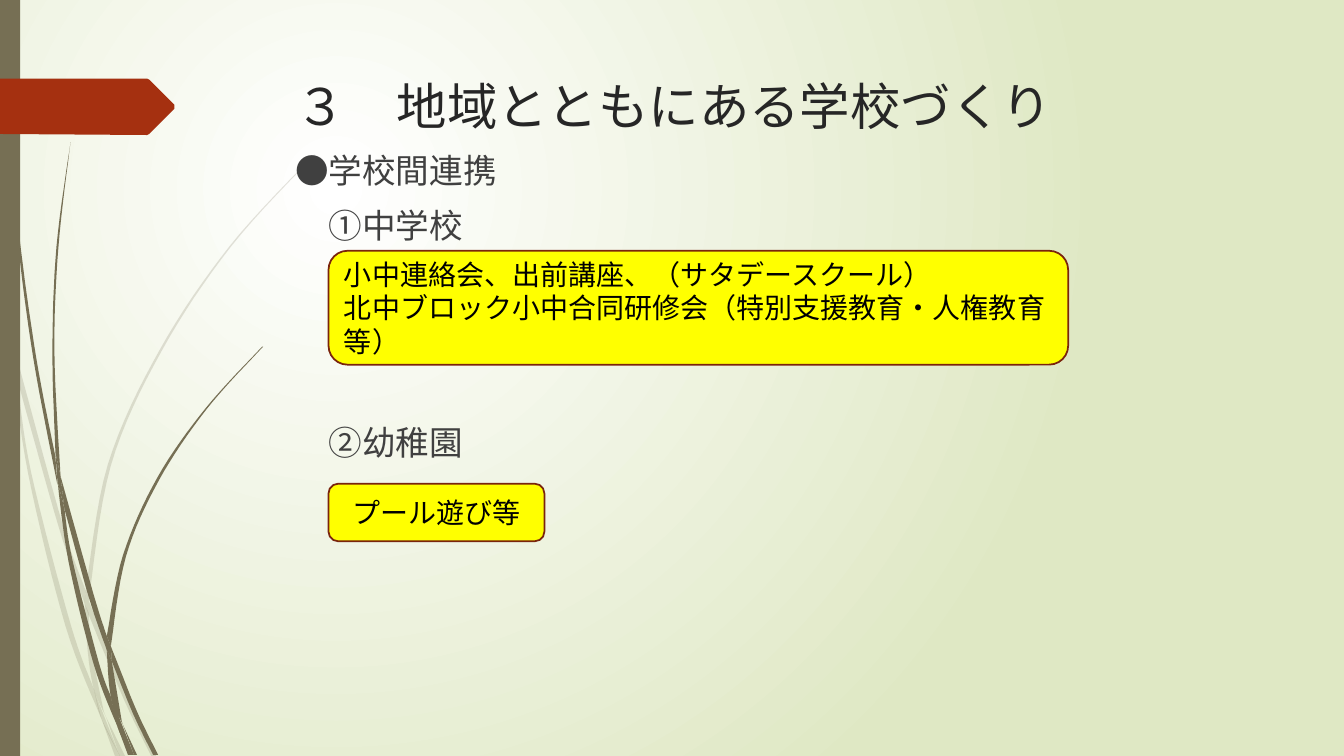
"""Build the slide on school partnerships with the community."""
import pptx
import pptx.dml.color
import pptx.enum.dml
import pptx.enum.shapes
import pptx.enum.text
import pptx.oxml.ns
import pptx.util
from lxml import etree

Cm, Pt = pptx.util.Cm, pptx.util.Pt
qn = pptx.oxml.ns.qn
SHAPES = pptx.enum.shapes.MSO_SHAPE
ALIGN = pptx.enum.text.PP_ALIGN
ANCHOR = pptx.enum.text.MSO_ANCHOR

THEME = {
    "glow": "FFFFFF", "meadow": "DFE8C4", "stem": "766F54", "flag": "A53010",
    "note": "FFFF00", "note_line": "7A240C", "title": "262626", "body": "404040",
    "note_text": "000000", "title_font": "TeX Gyre Adventor",
    "body_font": "Noto Sans CJK JP", "title_size": 36, "body_size": 24,
    "note_size": 20, "leading": 1.2, "gap": 10,
}

TITLE = ["３　地域とともにある学校づくり"]
BODY = ["●学校間連携", "　①中学校", "　②幼稚園"]
LINES_LEFT_OPEN = [0, 0, 3]
NOTES = [
    (["小中連絡会、出前講座、（サタデースクール）",
      "北中ブロック小中合同研修会（特別支援教育・人権教育等）"],
     (8.28, 6.32, 18.64, 2.87), ALIGN.LEFT),
    (["プール遊び等"], (8.28, 12.19, 5.44, 1.45), ALIGN.CENTER),
]

PALE_BLADES = [
    [[(0, 2.82), (.09, 3.22), (.11, 3.5)], [(.1, 3.44), (0, 2.99)]],
    [[(.14, 3.45), (.62, 5.2), (.85, 5.86)], [(.84, 5.99), (.58, 5.22), (.17, 3.76)]],
    [[(.88, 5.96), (1.27, 6.92), (1.55, 7.5)], [(1.5, 7.5), (1.23, 6.94), (.88, 6.1)]],
    [[(1.05, 7.11), (1.24, 7.5)], [(1.19, 7.5), (1.05, 7.11)]],
    [[(.11, 3.5), (.28, 4.7), (.65, 6.21), (1.01, 7.14)],
     [(.93, 6.83), (.7, 6.19), (.31, 4.69), (.17, 3.76)]],
    [[(.84, 5.99), (.87, 6.46), (.93, 6.83), (1.05, 7.11)],
     [(1.03, 7.06), (.91, 6.46), (.88, 6.08)]],
    [[(.85, 5.86), (1.07, 4.61), (1.58, 3.48), (2.28, 2.44), (3.12, 1.53)],
     [(3.12, 1.54), (2.29, 2.45), (1.6, 3.49), (1.1, 4.62), (.88, 5.96)]],
    [[(1.01, 7.14), (1.14, 7.5)], [(1.19, 7.5), (1.01, 7.14)]],
    [[(.84, 5.99), (.85, 5.86)], [(.88, 5.96), (.88, 6.1)]],
    [[(.93, 6.83), (1.01, 7.14), (1.19, 7.5)], [(1.19, 7.5), (.96, 6.92)]],
]
DARK_BLADES = [
    [[(.03, 0), (.07, 1.1), (.17, 2.33), (.33, 3.55), (.57, 4.81)],
     [(.55, 4.53), (.36, 3.55), (.19, 2.32), (.08, 1.09), (.04, 0)]],
    [[(.6, 4.72), (.93, 5.9), (1.06, 6.31)], [(1.06, 6.45), (.88, 5.92), (.64, 5.05)]],
    [[(1.1, 6.41), (1.36, 7.06), (1.57, 7.49)], [(1.52, 7.49), (1.32, 7.08), (1.11, 6.56)]],
    [[(.57, 4.77), (.68, 5.57), (.93, 6.59), (1.17, 7.22)],
     [(1.1, 6.91), (.98, 6.57), (.72, 5.56), (.64, 5.05)]],
    [[(.6, 4.72), (.54, 3.49), (.58, 2.45), (.7, 1.41)],
     [(.7, 1.41), (.56, 2.45), (.52, 3.49), (.55, 4.49)]],
    [[(1.22, 7.19), (1.36, 7.49)], [(1.33, 7.49), (1.22, 7.19)]],
    [[(.55, 4.49), (.6, 4.72)], [(.64, 5.05), (.57, 4.77)]],
    [[(1.06, 6.31), (1.22, 5.51), (1.56, 4.74), (2.04, 4.05), (2.6, 3.44)],
     [(2.61, 3.44), (2.05, 4.06), (1.58, 4.76), (1.25, 5.52), (1.1, 6.41)]],
    [[(1.17, 7.22), (1.31, 7.49)], [(1.27, 7.49), (1.17, 7.22)]],
    [[(1.06, 6.45), (1.1, 6.91), (1.22, 7.19)], [(1.21, 7.16), (1.11, 6.56)]],
    [[(1.06, 6.31), (1.1, 6.41)], [(1.11, 6.56), (1.06, 6.45)]],
    [[(1.1, 6.91), (1.17, 7.22), (1.3, 7.49)], [(1.33, 7.49), (1.1, 6.91)]],
]
FLAG = [[(0, .78), (1.46, .78)], [(1.48, .79), (1.73, 1.04)],
        [(1.73, 1.08), (1.48, 1.33)], [(1.46, 1.34), (0, 1.33)]]


def colour(name):
    return pptx.dml.color.RGBColor.from_string(THEME[name])


def smooth(edge, steps=8):
    """Return points along a Catmull-Rom curve through the edge."""
    if len(edge) == 2:
        return edge
    padded = [edge[0], *edge, edge[-1]]
    points = [edge[0]]
    for before, start, end, after in zip(padded, padded[1:], padded[2:], padded[3:]):
        for step in range(1, steps + 1):
            t = step / steps
            points.append(tuple(
                (2 * b + (c - a) * t + (2 * a - 5 * b + 4 * c - d) * t ** 2
                 + (3 * b - a - 3 * c + d) * t ** 3) / 2
                for a, b, c, d in zip(before, start, end, after)))
    return points


def paint(shape, fill, line=None):
    shape.shadow.inherit = False
    shape.fill.solid()
    shape.fill.fore_color.rgb = colour(fill)
    if line:
        shape.line.color.rgb = colour(line)
        shape.line.width = Pt(1.25)
    else:
        shape.line.fill.background()


def add_outline(page, edges, fill, opacity=100):
    points = [(x * 1000, y * 1000) for edge in edges for x, y in smooth(edge)]
    builder = page.shapes.build_freeform(*points[0], scale=Cm(2.54) / 1000)
    builder.add_line_segments(points[1:], close=True)
    shape = builder.convert_to_shape()
    paint(shape, fill)
    if opacity < 100:
        tint = shape.element.spPr.find(qn("a:solidFill")).find(qn("a:srgbClr"))
        etree.SubElement(tint, qn("a:alpha"), val=str(opacity * 1000))


def write(box, lines, kind, font, align=ALIGN.LEFT, anchor=ANCHOR.MIDDLE,
          gaps=None, leading=None):
    frame = box.text_frame
    frame.word_wrap = True
    frame.vertical_anchor = anchor
    for index, line in enumerate(lines):
        para = frame.paragraphs[0] if index == 0 else frame.add_paragraph()
        para.alignment = align
        para.space_before = Pt(gaps[index] if gaps else 0)
        if leading:
            para.line_spacing = Pt(leading)
        span = para.add_run()
        span.text = line
        span.font.name = THEME[font]
        span.font.size = Pt(THEME[kind.split("_")[0] + "_size"])
        span.font.color.rgb = colour(kind)


def paint_background(page):
    fill = page.background.fill
    fill.gradient()
    for stop, name in zip(fill.gradient_stops, ("glow", "meadow")):
        stop.color.rgb = colour(name)
    linear = next(page.element.iter(qn("a:lin")))
    radial = etree.Element(qn("a:path"))
    radial.set("path", "circle")
    etree.SubElement(radial, qn("a:fillToRect"), l="50000", t="50000", r="100000", b="100000")
    linear.getparent().replace(linear, radial)


def main():
    deck = pptx.Presentation()
    deck.slide_width, deck.slide_height = Cm(33.87), Cm(19.05)
    page = deck.slides.add_slide(deck.slide_layouts[6])
    paint_background(page)
    for blade in PALE_BLADES:
        add_outline(page, blade, "stem", 20)
    for blade in DARK_BLADES:
        add_outline(page, blade, "stem")
    spine = page.shapes.add_shape(SHAPES.RECTANGLE, 0, 0, Cm(0.51), deck.slide_height)
    paint(spine, "stem")
    add_outline(page, FLAG, "flag")

    heading = page.shapes.add_textbox(Cm(7.21), Cm(1.73), Cm(24.77), Cm(1.85))
    write(heading, TITLE, "title", "title_font")
    leading = THEME["body_size"] * THEME["leading"]
    gaps = [THEME["gap"] + count * (leading + THEME["gap"]) for count in LINES_LEFT_OPEN]
    gaps[0] = 0
    body = page.shapes.add_textbox(Cm(7.19), Cm(3.66), Cm(24.77), Cm(12.85))
    write(body, BODY, "body", "body_font", anchor=ANCHOR.TOP, gaps=gaps, leading=leading)
    for lines, place, align in NOTES:
        note = page.shapes.add_shape(SHAPES.ROUNDED_RECTANGLE, *map(Cm, place))
        paint(note, "note", "note_line")
        write(note, lines, "note_text", "body_font", align,
              leading=THEME["note_size"] * THEME["leading"])
    deck.save("out.pptx")


if __name__ == "__main__":
    main()
